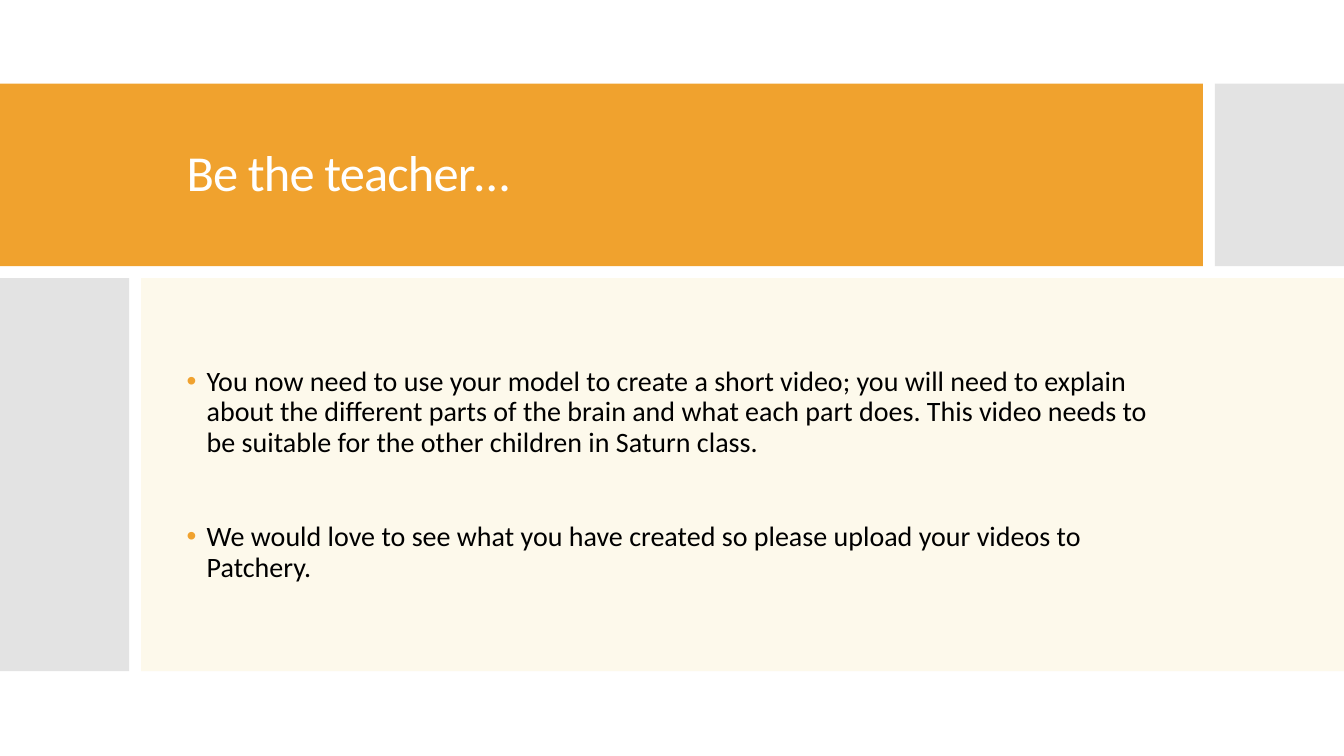
import pptx
import pptx.dml.color
import pptx.enum.shapes
import pptx.enum.text
import pptx.oxml
import pptx.oxml.ns
import pptx.util

PX = 9144  # 100 px to the inch
ORANGE, GREY, CREAM = "F0A22E", "C8C8C8", "FDF5DF"
WHITE, BLACK = "FFFFFF", "000000"


def color(value):
    return pptx.dml.color.RGBColor.from_string(value)


def px(*lengths):
    return [pptx.util.Emu(length * PX) for length in lengths]


def add_xml(parent, tag, **attributes):
    element = pptx.oxml.parse_xml(f"<a:{tag} {pptx.oxml.ns.nsdecls('a')}/>")
    for name, value in attributes.items():
        element.set(name, str(value))
    parent.append(element)
    return element


class SlideBuilder:
    font_name = "Calibri"
    line_spacing = 0.9

    def __init__(self, presentation):
        self.slide = presentation.slides.add_slide(presentation.slide_layouts[1])
        self.slide.background.fill.solid()
        self.slide.background.fill.fore_color.rgb = color(WHITE)

    def block(self, box, fill, opacity=100):
        shape = self.slide.shapes.add_shape(
            pptx.enum.shapes.MSO_SHAPE.RECTANGLE, *px(*box))
        shape.shadow.inherit = False
        shape.line.fill.background()
        shape.fill.solid()
        shape.fill.fore_color.rgb = color(fill)
        if opacity < 100:
            solid_fill = shape._element.spPr.find(pptx.oxml.ns.qn("a:solidFill"))
            add_xml(solid_fill[0], "alpha", val=opacity * 1000)

    def place(self, placeholder, box):
        """Move a placeholder to its box, in front of the blocks."""
        placeholder.left, placeholder.top, placeholder.width, placeholder.height = px(*box)
        self.slide.shapes._spTree.append(placeholder._element)
        frame = placeholder.text_frame
        frame.word_wrap = True
        frame.auto_size = pptx.enum.text.MSO_AUTO_SIZE.NONE
        frame.vertical_anchor = pptx.enum.text.MSO_ANCHOR.MIDDLE
        return frame

    def style(self, paragraph, size, font_color, space_before=0):
        paragraph.alignment = pptx.enum.text.PP_ALIGN.LEFT
        paragraph.line_spacing = self.line_spacing
        paragraph.space_before = pptx.util.Pt(space_before)
        paragraph.font.name = self.font_name
        paragraph.font.size = pptx.util.Pt(size)
        paragraph.font.color.rgb = color(font_color)

    def title(self, box, text):
        frame = self.place(self.slide.shapes.title, box)
        frame.text = text
        paragraph = frame.paragraphs[0]
        self.style(paragraph, 36, WHITE)
        paragraph.runs[0].font._element.set("spc", "-60")

    def bullets(self, box, items, gap):
        frame = self.place(self.slide.placeholders[1], box)
        frame.text = "\n".join(items)
        for index, paragraph in enumerate(frame.paragraphs):
            properties = paragraph._p.get_or_add_pPr()
            indent = px(20)[0]
            properties.set("marL", str(indent))
            properties.set("indent", str(-indent))
            add_xml(add_xml(properties, "buClr"), "srgbClr", val=ORANGE)
            add_xml(properties, "buFont", typeface="Arial")
            add_xml(properties, "buChar", char="•")
            self.style(paragraph, 20, BLACK, gap if index else 0)


def main():
    presentation = pptx.Presentation()
    presentation.slide_width, presentation.slide_height = px(1333, 750)
    builder = SlideBuilder(presentation)

    # Title band and its grey end
    builder.block((0, 83, 1193, 181), ORANGE)
    builder.block((1205, 83, 128, 181), GREY, 50)

    # Grey side and content panel
    builder.block((0, 276, 128, 390), GREY, 50)
    builder.block((140, 276, 1193, 390), CREAM, 60)

    # Text
    builder.title((175, 119, 982, 109), "Be the teacher…")
    builder.bullets((175, 277, 982, 389), [
        "You now need to use your model to create a short video; you will need "
        "to explain about the different parts of the brain and what each part "
        "does. This video needs to be suitable for the other children in Saturn class.",
        "We would love to see what you have created so please upload your "
        "videos to Patchery.",
    ], gap=46)

    presentation.save("out.pptx")


if __name__ == "__main__":
    main()
